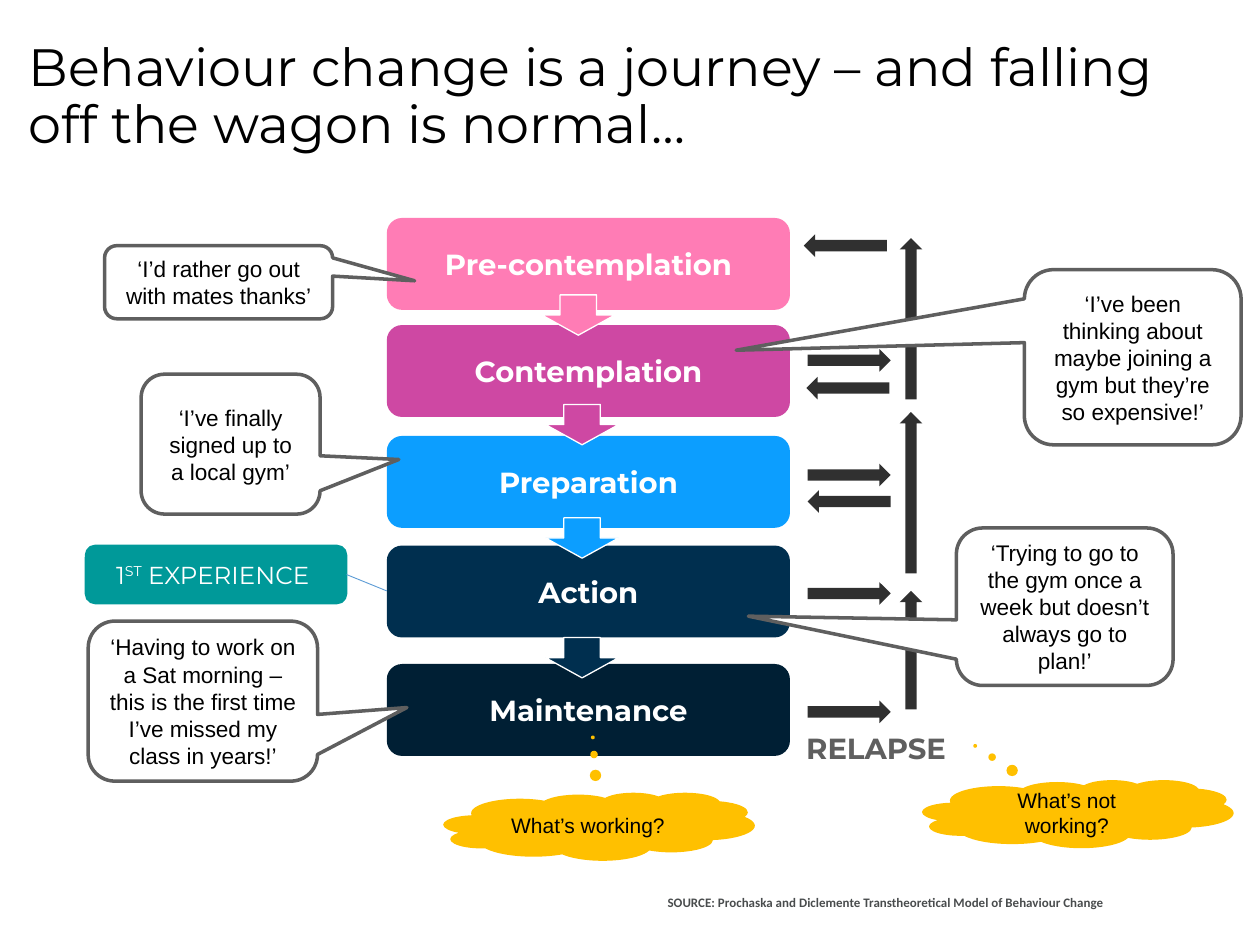
from dataclasses import dataclass
from typing import Optional

from lxml import etree
from pptx import Presentation
from pptx.dml.color import RGBColor
from pptx.enum import shapes, text
from pptx.oxml.ns import qn
from pptx.util import Inches, Pt

Kind = shapes.MSO_SHAPE


@dataclass(frozen=True)
class Theme:
    heading_font: str = "Montserrat"
    speech_font: str = "Arial"
    source_font: str = "Calibri"
    black: str = "000000"
    white: str = "FFFFFF"
    grey: str = "5F5F5F"
    source_grey: str = "494C4D"
    arrow: str = "303030"
    cloud: str = "FFC000"
    teal: str = "009999"
    link: str = "5B9BD5"
    title_size: float = 30
    stage_size: float = 16.6
    label_size: float = 14
    speech_size: float = 12.9
    cloud_size: float = 12
    source_size: float = 7.4


THEME = Theme()


@dataclass(frozen=True)
class Box:
    left: float
    top: float
    width: float
    height: float

    def lengths(self) -> tuple:
        return tuple(map(Inches, (self.left, self.top, self.width, self.height)))


@dataclass(frozen=True)
class Style:
    font: str
    size: float
    color: str
    bold: bool = False


@dataclass(frozen=True)
class Stage:
    name: str
    top: float
    color: str
    arrow: Optional[tuple] = None  # left and top of the arrow to the next stage


@dataclass(frozen=True)
class Callout:
    words: str
    box: Box
    tip: tuple


STAGE_STYLE = Style(THEME.heading_font, THEME.stage_size, THEME.white, True)
SPEECH_STYLE = Style(THEME.speech_font, THEME.speech_size, THEME.black)
CLOUD_STYLE = Style(THEME.speech_font, THEME.cloud_size, THEME.black)
LABEL_STYLE = Style(THEME.heading_font, THEME.label_size, THEME.white)

STAGES = [
    Stage("Pre-contemplation", 1.73, "FF7CB5", (4.3, 2.34)),
    Stage("Contemplation", 2.58, "CE48A3", (4.33, 3.21)),
    Stage("Preparation", 3.46, "0C9EFF", (4.33, 4.11)),
    Stage("Action", 4.33, "002F4F", (4.33, 5.06)),
    Stage("Maintenance", 5.27, "001F34"),
]

SIDE_ARROWS = [
    (Kind.LEFT_ARROW, 6.38, 1.86),
    (Kind.LEFT_ARROW, 6.4, 2.99),
    (Kind.LEFT_ARROW, 6.41, 3.89),
    *((Kind.RIGHT_ARROW, 6.41, top) for top in (2.77, 3.68, 4.62, 5.56)),
]
RELAPSE_ARROWS = [(1.89, 1.28), (3.27, 1.28), (4.69, 0.94)]  # top, height

CALLOUTS = [
    Callout("‘I’d rather go out with mates thanks’",
            Box(0.83, 1.95, 1.81, 0.58), (0.86, -0.02)),
    Callout("‘I’ve been thinking about maybe joining a gym but they’re so expensive!’",
            Box(8.13, 2.14, 1.72, 1.39), (-1.83, -0.04)),
    Callout("‘I’ve finally signed up to a local gym’",
            Box(1.12, 2.97, 1.42, 1.11), (0.94, 0.11)),
    Callout("‘Trying to go to the gym once a week but doesn’t always go to plan!’",
            Box(7.59, 4.19, 1.72, 1.25), (-1.46, 0.06)),
    Callout("‘Having to work on a Sat morning – this is the first time I’ve missed my class in years!’",
            Box(0.7, 4.93, 1.82, 1.27), (0.89, 0.04)),
]
CLOUDS = [
    Callout("What’s working?", Box(3.52, 6.29, 2.47, 0.54), (-0.02, -1.31)),
    Callout("What’s not working?", Box(7.32, 6.19, 2.47, 0.54), (-0.33, -1.0)),
]


def format_run(run, style: Style) -> None:
    run.font.name = style.font
    run.font.size = Pt(style.size)
    run.font.bold = style.bold
    run.font.color.rgb = RGBColor.from_string(style.color)


def add_block(slide, kind, box: Box, fill: str, line: Optional[str] = None,
              line_width: float = 1):
    """Add a filled preset shape, outlined only when a line colour is given."""
    shape = slide.shapes.add_shape(kind, *box.lengths())
    shape.shadow.inherit = False
    shape.fill.solid()
    shape.fill.fore_color.rgb = RGBColor.from_string(fill)
    if line:
        shape.line.color.rgb = RGBColor.from_string(line)
        shape.line.width = Pt(line_width)
    else:
        shape.line.fill.background()
    return shape


def write_centred(shape, words: str, style: Style) -> None:
    frame = shape.text_frame
    frame.word_wrap = True
    frame.vertical_anchor = text.MSO_ANCHOR.MIDDLE
    frame.text = words
    paragraph = frame.paragraphs[0]
    paragraph.alignment = text.PP_ALIGN.CENTER
    format_run(paragraph.runs[0], style)


def add_text(slide, box: Box, words: str, style: Style, wrap: bool = True):
    frame = slide.shapes.add_textbox(*box.lengths()).text_frame
    frame.word_wrap = wrap
    frame.text = words
    format_run(frame.paragraphs[0].runs[0], style)
    return frame


def add_callout(slide, kind, callout: Callout, shape_style: tuple, style: Style) -> None:
    shape = add_block(slide, kind, callout.box, *shape_style)
    shape.adjustments[0], shape.adjustments[1] = callout.tip
    write_centred(shape, callout.words, style)


def add_first_experience(slide) -> None:
    label = add_block(slide, Kind.ROUNDED_RECTANGLE, Box(0.68, 4.33, 2.07, 0.46),
                      THEME.teal, THEME.teal)
    write_centred(label, "1", LABEL_STYLE)
    paragraph = label.text_frame.paragraphs[0]
    for words, baseline in (("ST", "30000"), (" EXPERIENCE ", "0")):
        run = paragraph.add_run()
        run.text = words
        format_run(run, LABEL_STYLE)
        run.font._element.set("baseline", baseline)
    link = slide.shapes.add_connector(
        shapes.MSO_CONNECTOR.STRAIGHT,
        *map(Inches, (2.75, 4.56, 3.07, 4.69)))
    link.line.color.rgb = RGBColor.from_string(THEME.link)
    link.line.width = Pt(0.5)
    etree.SubElement(link._element.spPr, qn("a:effectLst"))


def main() -> None:
    presentation = Presentation()
    presentation.slide_width, presentation.slide_height = Inches(10), Inches(7.5)
    slide = presentation.slides.add_slide(presentation.slide_layouts[6])

    title = add_text(slide, Box(0.13, 0.28, 9.41, 1.01),
                     "Behaviour change is a journey – and falling off the wagon is normal…",
                     Style(THEME.heading_font, THEME.title_size, THEME.black))
    title.paragraphs[0].line_spacing = 0.9

    for stage in STAGES:
        block = add_block(slide, Kind.ROUNDED_RECTANGLE,
                          Box(3.07, stage.top, 3.2, 0.73), stage.color)
        write_centred(block, stage.name, STAGE_STYLE)
    for kind, left, top in SIDE_ARROWS:
        add_block(slide, kind, Box(left, top, 0.66, 0.18), THEME.arrow)
    for top, height in RELAPSE_ARROWS:
        add_block(slide, Kind.UP_ARROW, Box(7.14, top, 0.18, height), THEME.arrow)
    add_text(slide, Box(6.3, 5.75, 1.39, 0.38), "RELAPSE",
             Style(THEME.heading_font, THEME.stage_size, THEME.grey, True), wrap=False)
    for stage in STAGES:
        if stage.arrow:
            add_block(slide, Kind.DOWN_ARROW, Box(*stage.arrow, 0.58, 0.32),
                      stage.color, THEME.white, 0.75)

    for callout in CALLOUTS:
        add_callout(slide, Kind.ROUNDED_RECTANGULAR_CALLOUT, callout,
                    (THEME.white, THEME.grey, 2), SPEECH_STYLE)
    source = add_text(slide, Box(5.2, 6.92, 4.61, 0.35),
                      "SOURCE: Prochaska and Diclemente Transtheoretical Model of Behaviour Change",
                      Style(THEME.source_font, THEME.source_size, THEME.source_grey, True))
    source.vertical_anchor = text.MSO_ANCHOR.BOTTOM
    for cloud in CLOUDS:
        add_callout(slide, Kind.CLOUD_CALLOUT, cloud, (THEME.cloud,), CLOUD_STYLE)
    add_first_experience(slide)

    presentation.save("out.pptx")


if __name__ == "__main__":
    main()
